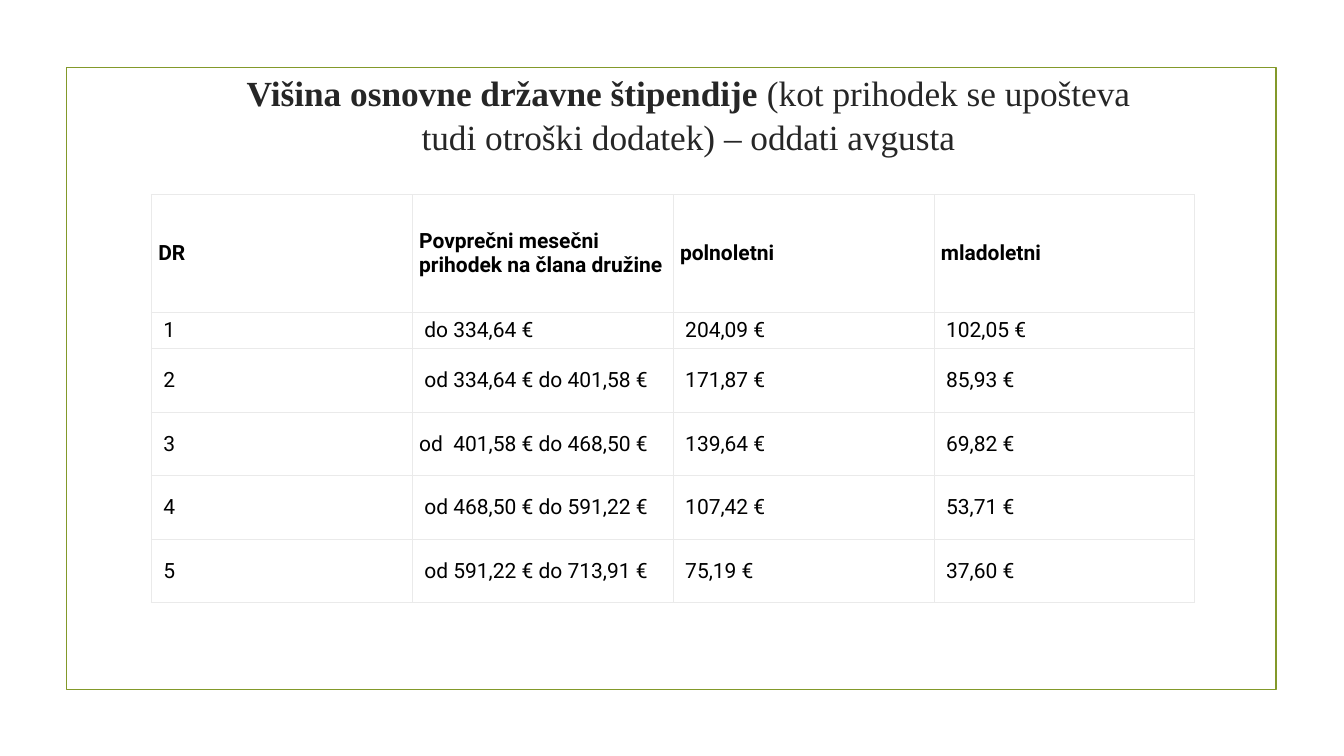
from lxml.etree import SubElement
from pptx import Presentation
from pptx.dml.color import RGBColor
from pptx.enum.shapes import MSO_SHAPE as Shape
from pptx.enum.text import MSO_ANCHOR as Anchor, MSO_AUTO_SIZE as AutoSize, PP_ALIGN as Align
from pptx.oxml.ns import qn
from pptx.util import Inches, Pt

COLORS = {"frame": "83992A", "title": "262626", "text": "000000", "grid": "EAEAEA", "cell": "FFFFFF"}
TITLE_FONT = {"name": "Times New Roman", "size": Pt(25.2)}
CELL_FONT = {"name": "Roboto", "size": Pt(15)}
CELL_FORMAT = {
    "vertical_anchor": Anchor.MIDDLE,
    "margin_left": Inches(0.07),
    "margin_right": Inches(0.07),
    "margin_top": Inches(0.04),
    "margin_bottom": Inches(0.04),
}
TITLE_SPANS = [
    ("Višina osnovne državne štipendije ", True),
    ("(kot prihodek se upošteva tudi otroški dodatek) – oddati avgusta", False),
]
ROW_HEIGHTS = [1.17, 0.36] + [0.63] * 4
GRANTS = [
    ("DR", "Povprečni mesečni prihodek na člana družine", "polnoletni", "mladoletni"),
    (" 1", " do 334,64 €", " 204,09 €", " 102,05 €"),
    (" 2", " od 334,64 € do 401,58 €", " 171,87 €", " 85,93 €"),
    (" 3", "od  401,58 € do 468,50 €", " 139,64 €", " 69,82 €"),
    (" 4", " od 468,50 € do 591,22 €", " 107,42 €", " 53,71 €"),
    (" 5", " od 591,22 € do 713,91 €", " 75,19 €", " 37,60 €"),
]


def apply_format(target, values):
    """Set each named attribute on the target."""
    for name, value in values.items():
        setattr(target, name, value)


def format_span(span, font, color, bold):
    """Give a run its font, colour and weight."""
    apply_format(span.font, {**font, "bold": bold})
    span.font.color.rgb = RGBColor.from_string(COLORS[color])


def add_frame(page, box):
    """Draw the green outline around the content."""
    frame = page.shapes.add_shape(Shape.RECTANGLE, *map(Inches, box))
    frame.shadow.inherit = False
    frame.fill.background()
    frame.line.color.rgb = RGBColor.from_string(COLORS["frame"])
    frame.line.width = Pt(1.25)


def fill_title(page, box):
    """Place the title and write its bold and regular parts."""
    title = page.shapes.title
    apply_format(title, dict(zip(("left", "top", "width", "height"), map(Inches, box))))
    apply_format(title.text_frame, {
        "word_wrap": True,
        "auto_size": AutoSize.NONE,
        "vertical_anchor": Anchor.BOTTOM,
        "margin_bottom": Inches(0.02),
    })
    para = title.text_frame.paragraphs[0]
    apply_format(para, {"alignment": Align.CENTER, "line_spacing": 1.03})
    for text, bold in TITLE_SPANS:
        span = para.add_run()
        span.text = text
        format_span(span, TITLE_FONT, "title", bold)


def add_borders(cell):
    """Draw thin grid lines on all four sides of a cell."""
    properties = cell._tc.get_or_add_tcPr()
    for side in ("a:lnL", "a:lnR", "a:lnT", "a:lnB"):
        line = SubElement(properties, qn(side), w=str(Pt(0.6)))
        fill = SubElement(line, qn("a:solidFill"))
        SubElement(fill, qn("a:srgbClr"), val=COLORS["grid"])


def fill_cell(cell, text, bold):
    """Write and format one table cell."""
    add_borders(cell)
    cell.fill.solid()
    cell.fill.fore_color.rgb = RGBColor.from_string(COLORS["cell"])
    apply_format(cell, CELL_FORMAT)
    span = cell.text_frame.paragraphs[0].add_run()
    span.text = text
    format_span(span, CELL_FONT, "text", bold)


def add_grants(page, box):
    """Build the table of grants by income class."""
    columns = len(GRANTS[0])
    table = page.shapes.add_table(len(GRANTS), columns, *map(Inches, box)).table
    table.horz_banding = False
    for column in table.columns:
        column.width = Inches(box[2] / columns)
    for index, (height, texts) in enumerate(zip(ROW_HEIGHTS, GRANTS)):
        table.rows[index].height = Inches(height)
        for cell, text in zip(table.rows[index].cells, texts):
            fill_cell(cell, text, index == 0)


def main():
    """Build the slide and save the deck."""
    deck = Presentation()
    apply_format(deck, {"slide_width": Inches(13.33), "slide_height": Inches(7.5)})
    page = deck.slides.add_slide(deck.slide_layouts[5])
    add_frame(page, (0.66, 0.67, 12, 6.17))
    fill_title(page, (2.33, 0.25, 9, 1.33))
    add_grants(page, (1.5, 1.93, 10.35, sum(ROW_HEIGHTS)))
    deck.save("out.pptx")


if __name__ == "__main__":
    main()
